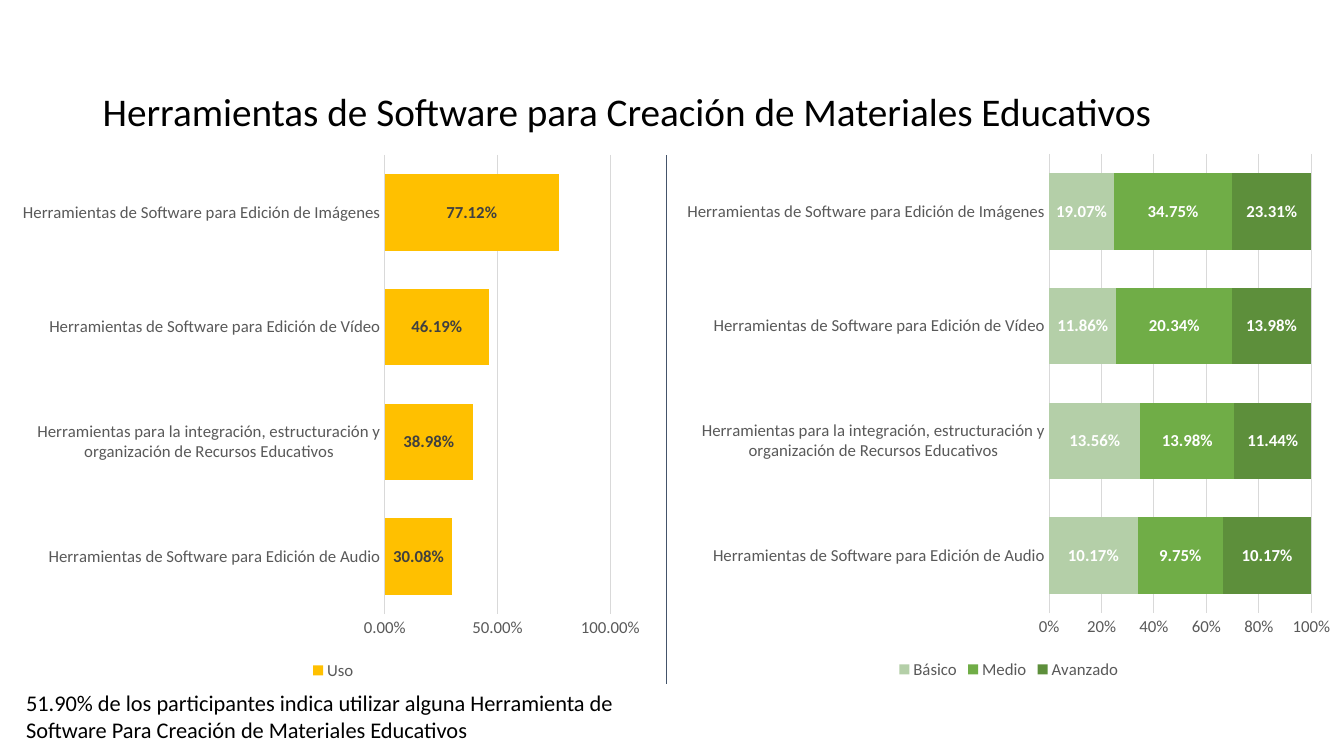
from dataclasses import dataclass

from lxml import etree
from pptx import Presentation
from pptx.chart.data import CategoryChartData
from pptx.dml.color import RGBColor
from pptx.enum.chart import XL_CHART_TYPE as ChartType
from pptx.enum.chart import XL_LABEL_POSITION as LabelPosition
from pptx.enum.chart import XL_LEGEND_POSITION as LegendPosition
from pptx.enum.chart import XL_TICK_MARK as TickMark
from pptx.enum.shapes import MSO_CONNECTOR as Connector
from pptx.enum.text import MSO_ANCHOR as Anchor
from pptx.oxml import parse_xml
from pptx.oxml.ns import nsdecls, qn
from pptx.util import Inches, Pt


@dataclass(frozen=True)
class Theme:
    """Colours, font and type sizes of the slide."""
    font: str = "Calibri"
    title_size: int = 28
    note_size: int = 16
    chart_size: int = 12
    ink: str = "000000"
    axis_text: str = "595959"
    grid: str = "D9D9D9"
    divider: str = "44546A"
    usage: str = "FFC000"
    usage_label: str = "404040"
    level_label: str = "FFFFFF"
    levels: tuple = ("B4CFA8", "70AD47", "5D8F3B")


THEME = Theme()
CATEGORIES = (
    "Herramientas de Software para Edición de Audio",
    "Herramientas para la integración, estructuración y organización de Recursos Educativos",
    "Herramientas de Software para Edición de Vídeo",
    "Herramientas de Software para Edición de Imágenes",
)
USAGE = {"Uso": (0.3008, 0.3898, 0.4619, 0.7712)}
LEVELS = {
    "Básico": (0.1017, 0.1356, 0.1186, 0.1907),
    "Medio": (0.0975, 0.1398, 0.2034, 0.3475),
    "Avanzado": (0.1017, 0.1144, 0.1398, 0.2331),
}


def style_font(font, color, size=THEME.chart_size, bold=False):
    """Apply the theme font with a colour, size and weight."""
    font.name = THEME.font
    font.size = Pt(size)
    font.bold = bold
    font.color.rgb = RGBColor.from_string(color)


def style_line(line, color, width):
    """Give a line its colour and width in points."""
    line.color.rgb = RGBColor.from_string(color)
    line.width = Pt(width)


def add_text(slide, text, box, *, size, anchor=Anchor.TOP, spacing=1.0):
    """Add a wrapped text box."""
    frame = slide.shapes.add_textbox(*map(Inches, box)).text_frame
    frame.word_wrap = True
    frame.vertical_anchor = anchor
    paragraph = frame.paragraphs[0]
    paragraph.line_spacing = spacing
    run = paragraph.add_run()
    run.text = text
    style_font(run.font, THEME.ink, size)


def place_plot(chart, **fractions):
    """Fix the inner plot area as fractions of the chart."""
    plot_area = chart._chartSpace.chart.plotArea
    for layout in plot_area.findall(qn("c:layout")):
        plot_area.remove(layout)
    layout = parse_xml(
        f'<c:layout {nsdecls("c")}><c:manualLayout><c:layoutTarget val="inner"/>'
        '<c:xMode val="edge"/><c:yMode val="edge"/></c:manualLayout></c:layout>'
    )
    for name, fraction in fractions.items():
        etree.SubElement(layout[0], qn(f"c:{name}")).set("val", str(fraction))
    plot_area.insert(0, layout)


def style_axes(chart, number_format, major_unit):
    """Format both axes and the value gridlines."""
    for axis in (chart.category_axis, chart.value_axis):
        axis.major_tick_mark = axis.minor_tick_mark = TickMark.NONE
        style_font(axis.tick_labels.font, THEME.axis_text)
    style_line(chart.category_axis.format.line, THEME.grid, 0.75)
    values = chart.value_axis
    values.format.line.fill.background()
    values.minimum_scale, values.maximum_scale = 0, 1
    values.major_unit = major_unit
    values.has_major_gridlines = True
    style_line(values.major_gridlines.format.line, THEME.grid, 0.75)
    values.tick_labels.number_format = number_format
    values.tick_labels.number_format_is_linked = False


def add_bars(slide, kind, box, data, colors, *, label_color, axis_format, major_unit, plot_x, plot_w):
    """Add a horizontal bar chart with centred value labels."""
    chart_data = CategoryChartData(number_format="0.00%")
    chart_data.categories = CATEGORIES
    for name, values in data.items():
        chart_data.add_series(name, values)
    chart = slide.shapes.add_chart(kind, *map(Inches, box), chart_data).chart
    style_font(chart.font, THEME.axis_text)
    chart.has_title = False
    chart.has_legend = True
    chart.legend.position = LegendPosition.BOTTOM
    chart.legend.include_in_layout = False
    style_font(chart.legend.font, THEME.axis_text)
    style_axes(chart, axis_format, major_unit)
    plot = chart.plots[0]
    plot.gap_width = 50
    plot.vary_by_categories = False
    if kind == ChartType.BAR_STACKED_100:
        plot.overlap = 100
    for series, color in zip(plot.series, colors):
        series.format.fill.solid()
        series.format.fill.fore_color.rgb = RGBColor.from_string(color)
        labels = series.data_labels
        labels.show_value = True
        labels.position = LabelPosition.CENTER
        labels.number_format = "0.00%"
        labels.number_format_is_linked = False
        style_font(labels.font, label_color, bold=True)
    place_plot(chart, x=plot_x, y=0.02, w=plot_w, h=0.85)


def add_divider(slide, x, top, bottom):
    """Add the thin vertical line between the charts."""
    line = slide.shapes.add_connector(
        Connector.STRAIGHT, Inches(x), Inches(top), Inches(x), Inches(bottom)
    )
    style_line(line.line, THEME.divider, 0.5)
    etree.SubElement(line._element.spPr, qn("a:effectLst"))


def main():
    """Build and save the slide."""
    presentation = Presentation()
    presentation.slide_width = Inches(13.33)
    presentation.slide_height = Inches(7.5)
    slide = presentation.slides.add_slide(presentation.slide_layouts[6])
    add_text(slide, "Herramientas de Software para Creación de Materiales Educativos",
             (0.92, 0.4, 11.5, 1.45), size=THEME.title_size, anchor=Anchor.MIDDLE, spacing=0.9)
    add_bars(slide, ChartType.BAR_CLUSTERED, (0.11, 1.43, 6.39, 5.36), USAGE, (THEME.usage,),
             label_color=THEME.usage_label, axis_format="0.00%", major_unit=0.5,
             plot_x=0.58, plot_w=0.35)
    add_bars(slide, ChartType.BAR_STACKED_100, (6.67, 1.42, 6.67, 5.36), LEVELS, THEME.levels,
             label_color=THEME.level_label, axis_format="0%", major_unit=0.2,
             plot_x=0.56, plot_w=0.39)
    add_divider(slide, 6.61, 1.54, 6.79)
    add_text(slide, "51.90% de los participantes indica utilizar alguna Herramienta de "
             "Software Para Creación de Materiales Educativos",
             (0.16, 6.79, 6.45, 0.64), size=THEME.note_size)
    presentation.save("out.pptx")


if __name__ == "__main__":
    main()
